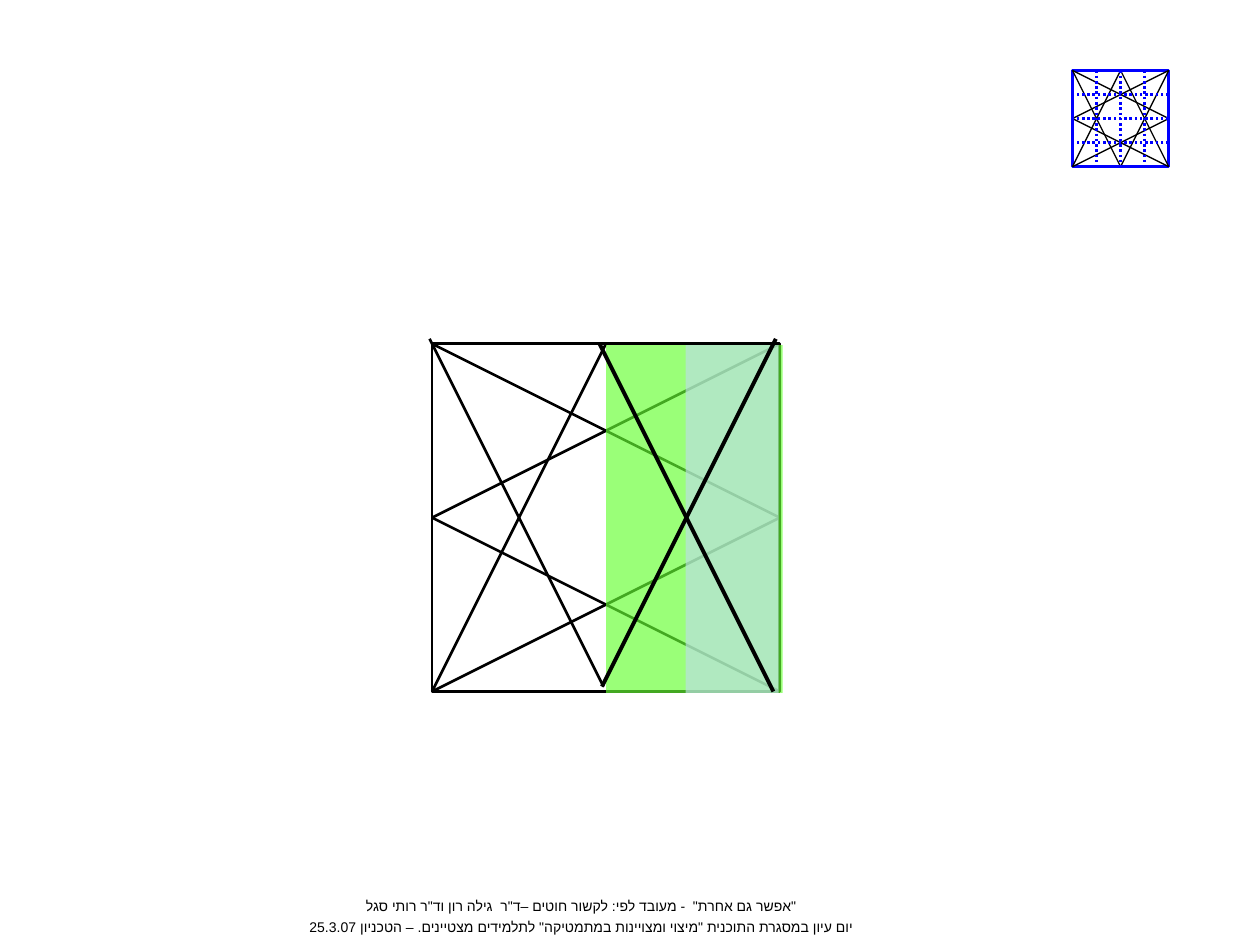
from dataclasses import dataclass
from typing import Any, NamedTuple

from lxml.etree import SubElement
from pptx import Presentation
from pptx.dml.color import RGBColor
from pptx.enum.dml import MSO_LINE_DASH_STYLE as Dash
from pptx.enum.shapes import MSO_CONNECTOR as Link, MSO_SHAPE as Shape
from pptx.enum.text import MSO_AUTO_SIZE as AutoSize, PP_ALIGN as Align
from pptx.oxml.ns import qn
from pptx.util import Cm, Pt


@dataclass(frozen=True)
class Theme:
    black: str = "000000"
    blue: str = "0000FF"
    green: str = "66FF33"
    teal: str = "BBE0E3"
    font: str = "Arial"
    footer_size: float = 8
    footer_gap: float = 2.8


class Square(NamedTuple):
    """A square frame, in centimetres."""
    left: float
    top: float
    side: float


class Stroke(NamedTuple):
    color: str
    width: float
    dotted: bool = False


class Thread(NamedTuple):
    """A line across a square, in fractions of its side, with a shift in centimetres."""
    start: tuple[float, float]
    end: tuple[float, float]
    shift: tuple[float, float] = (0, 0)


class Panel(NamedTuple):
    left: float
    width: float
    color: str
    opacity: int


THEME = Theme()
SIDE_SITES = {(0.5, 0): 0, (0, 0.5): 1, (0.5, 1): 2, (1, 0.5): 3}

MAIN = Square(8.71, 6.93, 7.01)
ICON = Square(21.62, 1.42, 1.94)

# Threads from the left and right corners to the middles of the sides
FLAT_THREADS = [
    Thread((0, 0), (1, 0.5)),
    Thread((0, 0.5), (1, 0)),
    Thread((0, 1), (1, 0.5)),
    Thread((0, 0.5), (1, 1)),
]
FALLING_LEFT = Thread((0, 0), (0.5, 1))
RISING_LEFT = Thread((0.5, 0), (0, 1))
FALLING_RIGHT = Thread((0.5, 0), (1, 1))
RISING_RIGHT = Thread((0.5, 1), (1, 0))
STEEP_THREADS = [RISING_RIGHT, FALLING_LEFT, RISING_LEFT, FALLING_RIGHT]

QUARTERS = (0.25, 0.5, 0.75)
GRID_THREADS = [Thread((q, 0), (q, 1)) for q in QUARTERS] + [
    Thread((1, q), (0, q)) for q in QUARTERS
]

PANELS = [
    Panel(12.22, 3.56, THEME.green, 66),
    Panel(13.82, 1.88, THEME.teal, 68),
]

FOOTER = [
    '"אפשר גם אחרת"  - מעובד לפי: לקשור חוטים –ד"ר  גילה רון וד"ר רותי סגל',
    'יום עיון במסגרת התוכנית "מיצוי ומצויינות במתמטיקה" לתלמידים מצטיינים. – הטכניון 25.3.07',
]


def set_stroke(item: Any, stroke: Stroke) -> None:
    item.line.color.rgb = RGBColor.from_string(stroke.color)
    item.line.width = Pt(stroke.width)
    if stroke.dotted:
        item.line.dash_style = Dash.ROUND_DOT


def draw_frame(shapes: Any, square: Square, stroke: Stroke) -> Any:
    left, top, side = map(Cm, square)
    frame = shapes.add_shape(Shape.RECTANGLE, left, top, side, side)
    frame.shadow.inherit = False
    frame.fill.background()
    set_stroke(frame, stroke)
    return frame


def draw_threads(shapes: Any, frame: Any, square: Square,
                 threads: list[Thread], stroke: Stroke) -> None:
    for thread in threads:
        shift_x, shift_y = thread.shift
        ends = [
            (Cm(square.left + x * square.side + shift_x),
             Cm(square.top + y * square.side + shift_y))
            for x, y in (thread.start, thread.end)
        ]
        line = shapes.add_connector(Link.STRAIGHT, *ends[0], *ends[1])
        set_stroke(line, stroke)
        SubElement(line._element.spPr, qn("a:effectLst"))
        if thread.shift == (0, 0):
            if thread.start in SIDE_SITES:
                line.begin_connect(frame, SIDE_SITES[thread.start])
            if thread.end in SIDE_SITES:
                line.end_connect(frame, SIDE_SITES[thread.end])


def draw_panel(shapes: Any, panel: Panel) -> None:
    box = shapes.add_shape(Shape.RECTANGLE, Cm(panel.left), Cm(MAIN.top + 0.03),
                           Cm(panel.width), Cm(MAIN.side))
    box.shadow.inherit = False
    box.line.fill.background()
    box.fill.solid()
    box.fill.fore_color.rgb = RGBColor.from_string(panel.color)
    color = box._element.spPr.find(qn("a:solidFill"))[0]
    SubElement(color, qn("a:alpha"), val=str(panel.opacity * 1000))


def draw_footer(shapes: Any) -> None:
    box = shapes.add_textbox(Cm(2.39), Cm(17.96), Cm(18.67), Cm(1.04))
    frame = box.text_frame
    frame.word_wrap = True
    frame.auto_size = AutoSize.SHAPE_TO_FIT_TEXT
    for index, text in enumerate(FOOTER):
        para = frame.add_paragraph() if index else frame.paragraphs[0]
        para.alignment = Align.CENTER
        para._p.get_or_add_pPr().set("rtl", "1")
        if index:
            para.space_before = Pt(THEME.footer_gap)
        span = para.add_run()
        span.text = text
        span.font.size = Pt(THEME.footer_size)
        span.font.name = THEME.font
        span.font.color.rgb = RGBColor.from_string(THEME.black)
        SubElement(span._r.get_or_add_rPr(), qn("a:cs"), typeface=THEME.font)


def main() -> None:
    deck = Presentation()
    deck.slide_width, deck.slide_height = Cm(25.4), Cm(19.05)
    page = deck.slides.add_slide(deck.slide_layouts[6])
    shapes = page.shapes

    # Large square with its threads
    thin = Stroke(THEME.black, 1.5)
    frame = draw_frame(shapes, MAIN, thin)
    left_pair = [FALLING_LEFT._replace(shift=(-0.05, -0.1)), RISING_LEFT]
    draw_threads(shapes, frame, MAIN, FLAT_THREADS + left_pair, thin)

    # Tinted right half, with the bold threads above it
    for panel in PANELS:
        draw_panel(shapes, panel)
    right_pair = [FALLING_RIGHT._replace(shift=(-0.13, 0)),
                  RISING_RIGHT._replace(shift=(-0.08, -0.1))]
    draw_threads(shapes, frame, MAIN, right_pair, Stroke(THEME.black, 2.25))

    # Small key square with its dotted grid
    icon = shapes.add_group_shape().shapes
    icon_frame = draw_frame(icon, ICON, Stroke(THEME.blue, 1.5))
    draw_threads(icon, icon_frame, ICON, FLAT_THREADS + STEEP_THREADS,
                 Stroke(THEME.black, 0.75))
    draw_threads(icon, icon_frame, ICON, GRID_THREADS, Stroke(THEME.blue, 1.5, True))

    # Credits line
    draw_footer(shapes)
    deck.save("out.pptx")


if __name__ == "__main__":
    main()
